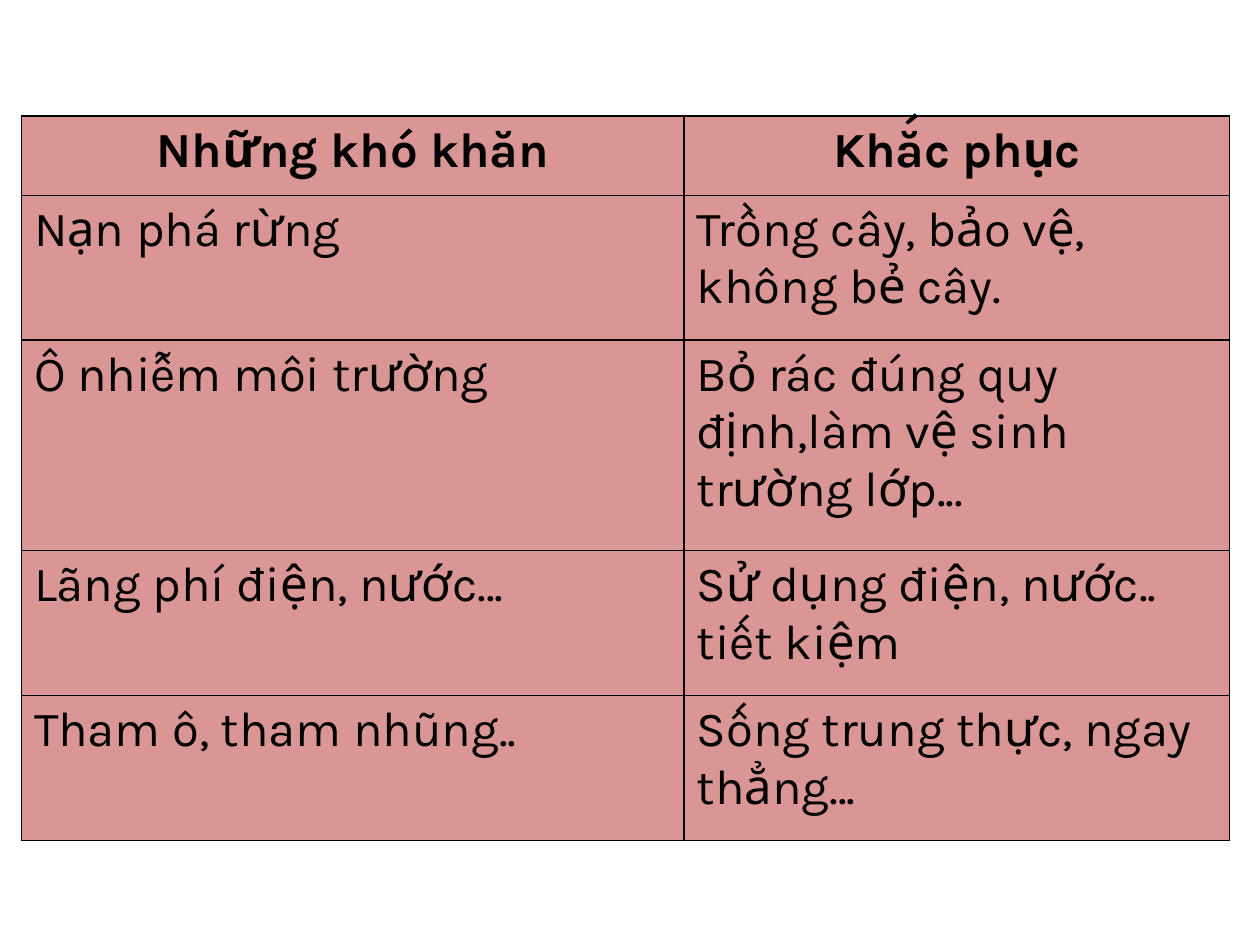
from typing import NamedTuple

from lxml import etree
from pptx import Presentation
from pptx.dml.color import RGBColor
from pptx.enum.text import PP_ALIGN
from pptx.oxml.ns import qn
from pptx.util import Inches, Pt

CENTER, LEFT = PP_ALIGN.CENTER, PP_ALIGN.LEFT
COLORS = {"fill": "D99694", "text": "000000", "border": "000000"}
FONT = "Karla"
FONT_SIZE = Pt(28)
BORDER_WIDTH = Pt(1)
COL_WIDTHS = (5.26, 4.33)


class Row(NamedTuple):
    difficulty: str
    remedy: str
    height: float
    header: bool = False


ROWS = [
    Row("Những khó khăn", "Khắc phục", 0.63, header=True),
    Row("Nạn phá rừng", "Trồng cây, bảo vệ, không bẻ cây.", 1.15),
    Row("Ô nhiễm môi trường", "Bỏ rác đúng quy định,làm vệ sinh trường lớp...", 1.67),
    Row("Lãng phí điện, nước...", "Sử dụng điện, nước.. tiết kiệm", 1.15),
    Row("Tham ô, tham nhũng..", "Sống trung thực, ngay thẳng...", 1.15),
]


def add_borders(cell) -> None:
    """Put a solid line on all four sides; lines must precede the fill."""
    tc_pr = cell._tc.get_or_add_tcPr()
    for i, side in enumerate(("lnL", "lnR", "lnT", "lnB")):
        ln = etree.Element(qn(f"a:{side}"), w=str(BORDER_WIDTH))
        fill = etree.SubElement(ln, qn("a:solidFill"))
        etree.SubElement(fill, qn("a:srgbClr"), val=COLORS["border"])
        tc_pr.insert(i, ln)


def fill_cell(cell, text: str, header: bool) -> None:
    cell.fill.solid()
    cell.fill.fore_color.rgb = RGBColor.from_string(COLORS["fill"])
    add_borders(cell)
    p = cell.text_frame.paragraphs[0]
    p.alignment = CENTER if header else LEFT
    r = p.add_run()
    r.text = text
    r.font.name = FONT
    r.font.size = FONT_SIZE
    r.font.bold = header
    r.font.color.rgb = RGBColor.from_string(COLORS["text"])


def add_remedy_table(s, left: float, top: float) -> None:
    table = s.shapes.add_table(
        len(ROWS), len(COL_WIDTHS), Inches(left), Inches(top),
        Inches(sum(COL_WIDTHS)), Inches(sum(row.height for row in ROWS)),
    ).table
    table.horz_banding = False
    for col, width in zip(table.columns, COL_WIDTHS):
        col.width = Inches(width)
    for i, row in enumerate(ROWS):
        table.rows[i].height = Inches(row.height)
        for j, text in enumerate((row.difficulty, row.remedy)):
            fill_cell(table.cell(i, j), text, row.header)


def main() -> None:
    prs = Presentation()
    prs.slide_width, prs.slide_height = Inches(10), Inches(7.5)
    s = prs.slides.add_slide(prs.slide_layouts[6])

    # Difficulties and how to overcome them
    add_remedy_table(s, 0.17, 0.92)

    prs.save("out.pptx")


if __name__ == "__main__":
    main()
